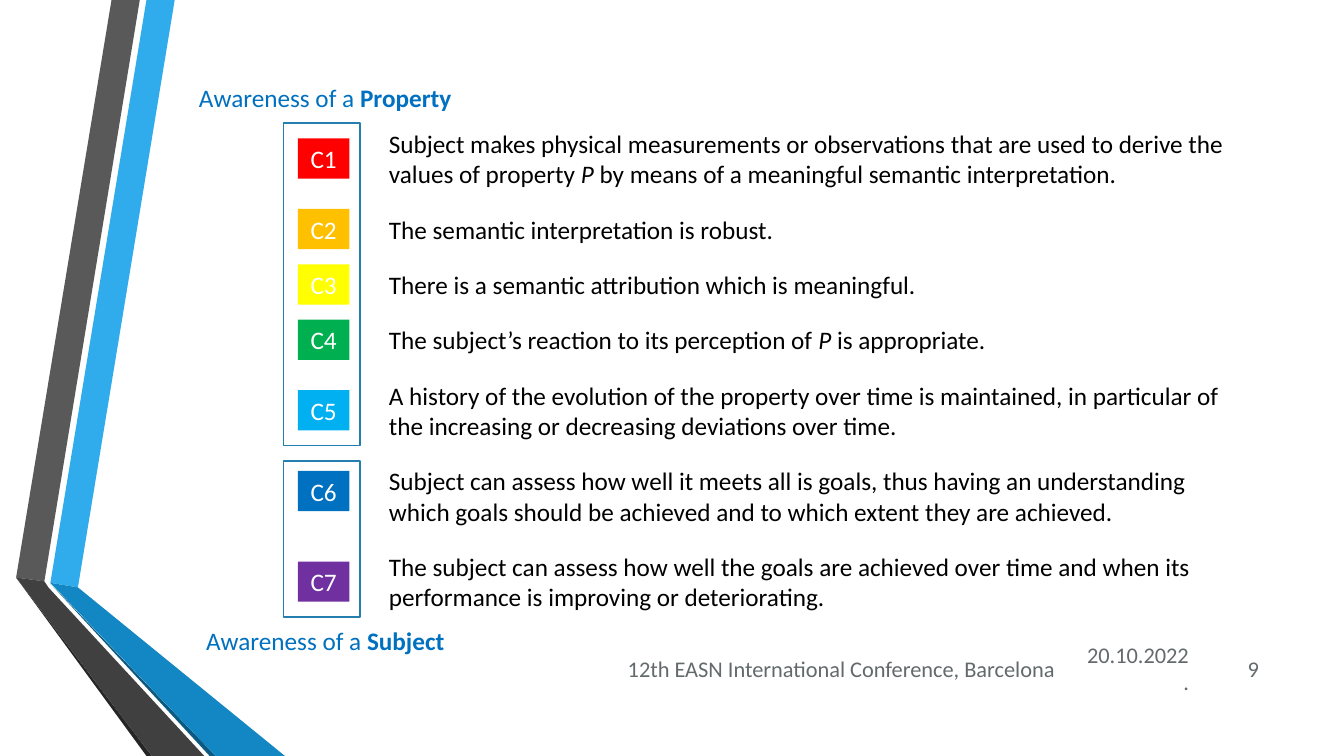
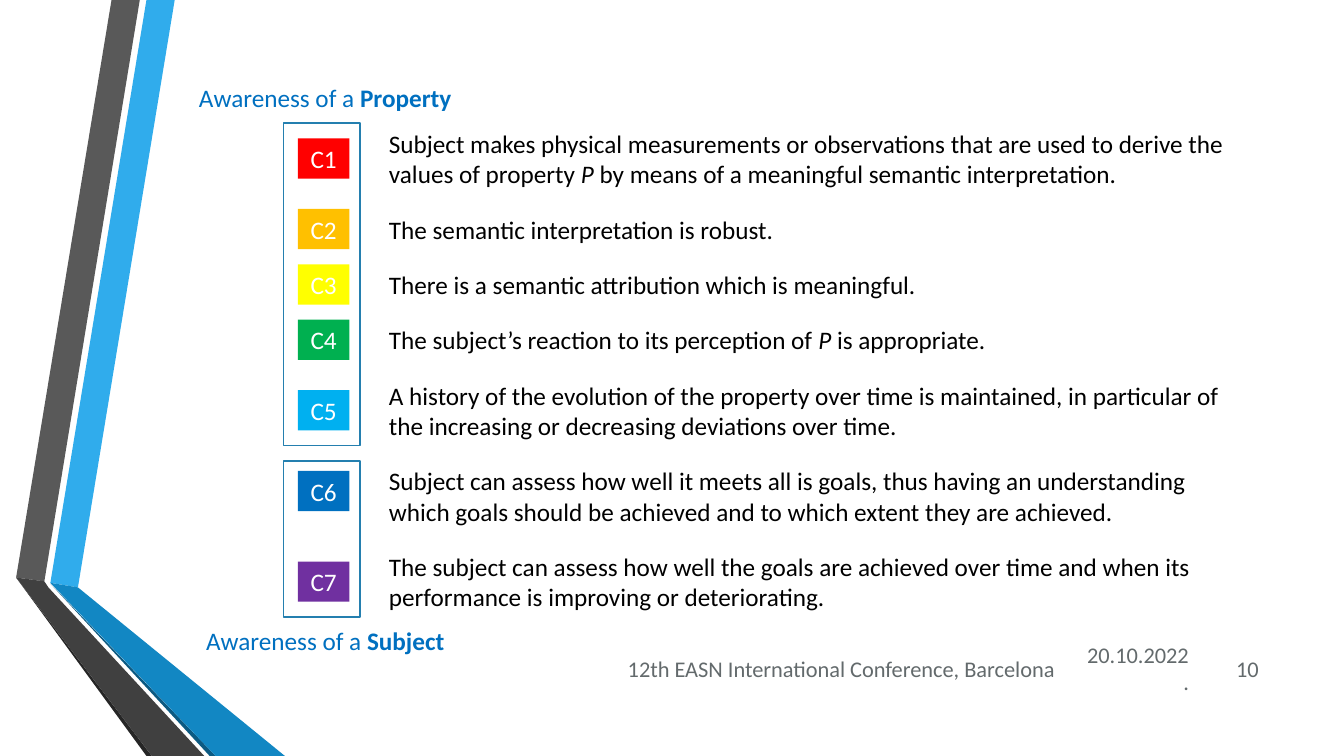
from dataclasses import dataclass

from pptx import Presentation
from pptx.dml.color import RGBColor
from pptx.enum.shapes import MSO_SHAPE
from pptx.enum.text import MSO_ANCHOR, PP_ALIGN
from pptx.util import Inches, Pt

RECTANGLE = MSO_SHAPE.RECTANGLE
LEFT, CENTER, RIGHT = PP_ALIGN.LEFT, PP_ALIGN.CENTER, PP_ALIGN.RIGHT
TOP, MIDDLE = MSO_ANCHOR.TOP, MSO_ANCHOR.MIDDLE
BLANK_LAYOUT = 6


@dataclass(frozen=True)
class Theme:
    font: str = "Calibri"
    body_size: int = 18
    footer_size: int = 16
    text: str = "000000"
    heading: str = "0070C0"
    footer: str = "636A6C"
    badge_text: str = "FFFFFF"
    frame: str = "247FAF"
    frame_width: float = 1.25
    blue: str = "30ACEC"
    blue_fold: str = "1287C3"
    blue_edge: str = "0C5A82"
    gray: str = "595959"
    gray_fold: str = "404040"
    gray_edge: str = "262626"


THEME = Theme()


@dataclass(frozen=True)
class Box:
    left: float
    top: float
    width: float
    height: float

    def point(self, x, y):
        """Place a point given in percent of this box."""
        return (self.left + self.width * x / 100,
                self.top + self.height * y / 100)

    def share(self, x, y, width, height):
        """Cut out a box given in percent of this box."""
        return Box(*self.point(x, y),
                   self.width * width / 100, self.height * height / 100)

    def emu(self):
        return [Inches(v) for v in (self.left, self.top, self.width, self.height)]


@dataclass(frozen=True)
class Criterion:
    label: str
    color: str
    lines: int
    spans: tuple
    shift: int = 0  # badge offset in grid rows


SLIDE = Box(0, 0, 13.33, 7.5)

# Each band: fill and corners, in percent of the slide
BANDS = (
    (THEME.blue, ((3.75, 77.1), (5.8, 77.7), (13, 0), (10.9, 0))),
    (THEME.gray, ((10.4, 0), (8.3, 0), (1.2, 76.4), (3.3, 76.9))),
    (THEME.gray_edge, ((1.2, 76.4), (10.9, 100), (11.3, 100))),
    (THEME.blue_edge, ((3.75, 77.2), (15.6, 100), (16.05, 100))),
    (THEME.blue_fold, ((3.75, 77.1), (16.05, 100), (21.2, 100), (5.8, 77.7))),
    (THEME.gray_fold, ((15.2, 100), (3.6, 77.7), (3.3, 76.9), (1.2, 76.4),
                       (11.3, 100))),
)

PROPERTY_CRITERIA = (
    Criterion("C1", "FF0000", 2, (
        "Subject makes physical measurements or observations that are used "
        "to derive the values of property ", ("P", "italic"),
        " by means of a meaningful semantic interpretation.")),
    Criterion("C2", "FFC000", 1, ("The semantic interpretation is robust.",)),
    Criterion("C3", "FFFF00", 1, (
        "There is a semantic attribution which is meaningful.",)),
    Criterion("C4", "00B050", 1, (
        "The subject’s reaction to its perception of ", ("P", "italic"),
        " is appropriate.")),
    Criterion("C5", "00B0F0", 2, (
        "A history of the evolution of the property over time is maintained, "
        "in particular of the increasing or decreasing deviations over time.",)),
)
SUBJECT_CRITERIA = (
    Criterion("C6", "0070C0", 2, (
        "Subject can assess how well it meets all is goals, thus having an "
        "understanding which goals should be achieved and to which extent "
        "they are achieved.",), shift=-1),
    Criterion("C7", "7030A0", 2, (
        "The subject can assess how well the goals are achieved over time "
        "and when its performance is improving or deteriorating.",)),
)

# Grid rows taken by a criterion of one or two lines, and by the gap below it
ROWS = {1: 8, 2: 14}
GAP_ROWS = 3
BADGE_ROWS = 8


def rgb(color):
    return RGBColor.from_string(color)


def write_text(shape, *spans, size=THEME.body_size, color=THEME.text,
               align=LEFT, anchor=TOP):
    """Write spans, each a string or a (string, font attribute) pair."""
    frame = shape.text_frame
    frame.word_wrap = True
    frame.vertical_anchor = anchor
    para = frame.paragraphs[0]
    para.alignment = align
    for item in spans:
        words, style = (item, None) if isinstance(item, str) else item
        span = para.add_run()
        span.text = words
        span.font.name = THEME.font
        span.font.size = Pt(size)
        span.font.color.rgb = rgb(color)
        if style:
            setattr(span.font, style, True)


def add_text(page, box, *spans, **style):
    write_text(page.shapes.add_textbox(*box.emu()), *spans, **style)


def paint(shape, fill=None, line=None):
    shape.shadow.inherit = False
    if fill:
        shape.fill.solid()
        shape.fill.fore_color.rgb = rgb(fill)
    else:
        shape.fill.background()
    if line:
        shape.line.color.rgb = rgb(line)
        shape.line.width = Pt(THEME.frame_width)
    else:
        shape.line.fill.background()


def add_rectangle(page, box, **colors):
    shape = page.shapes.add_shape(RECTANGLE, *box.emu())
    paint(shape, **colors)
    return shape


def add_bands(page, box):
    for color, corners in BANDS:
        start, *others = [tuple(Inches(v) for v in box.point(*corner))
                          for corner in corners]
        builder = page.shapes.build_freeform(*start)
        builder.add_line_segments(others, close=True)
        paint(builder.convert_to_shape(), fill=color)


def add_footer(page, box, number):
    cells = (
        ("12th EASN International Conference, Barcelona", 0, 79.3),
        ("20.10.2022.", 80.1, 12.8),
        (str(number), 93.9, 6.1),
    )
    for words, left, width in cells:
        add_text(page, box.share(left, 0, width, 100), words,
                 size=THEME.footer_size, color=THEME.footer,
                 align=RIGHT, anchor=MIDDLE)


def add_heading(page, box, topic):
    add_text(page, box, "Awareness of a ", (topic, "bold"),
             color=THEME.heading, align=CENTER)


def add_criterion(page, box, criterion):
    row = box.height / ROWS[criterion.lines]
    badge_height = BADGE_ROWS * row
    left, middle = box.point(1.5, 50)
    badge = Box(left, middle - badge_height / 2 + criterion.shift * row,
                box.width * 0.054, badge_height)
    write_text(add_rectangle(page, badge, fill=criterion.color),
               criterion.label, color=THEME.badge_text,
               align=CENTER, anchor=MIDDLE)
    add_text(page, box.share(10, 0, 90, 100), *criterion.spans)


def add_criteria(page, box, groups):
    """Stack the criteria of all groups and frame the badges of each group."""
    total = sum(ROWS[criterion.lines] + GAP_ROWS
                for group in groups for criterion in group) - GAP_ROWS
    row = 100 / total
    top = 0
    for group in groups:
        first = top
        for criterion in group:
            rows = ROWS[criterion.lines]
            add_criterion(page, box.share(0, top * row, 100, rows * row),
                          criterion)
            top += rows + GAP_ROWS
        frame = box.share(0, first * row, 8, (top - GAP_ROWS - first) * row)
        add_rectangle(page, frame, line=THEME.frame)


def add_awareness_slide(deck, box, number):
    page = deck.slides.add_slide(deck.slide_layouts[BLANK_LAYOUT])
    add_bands(page, box)
    add_footer(page, box.share(21.1, 85.7, 73.3, 5.4), number)
    add_criteria(page, box.share(21.1, 16.3, 71, 65.3),
                 (PROPERTY_CRITERIA, SUBJECT_CRITERIA))
    add_heading(page, box.share(9.2, 10.3, 30, 5.3), "Property")
    add_heading(page, box.share(9.2, 82.1, 30, 5.3), "Subject")


def main():
    deck = Presentation()
    deck.slide_width = Inches(SLIDE.width)
    deck.slide_height = Inches(SLIDE.height)
    for number in (9, 10):
        add_awareness_slide(deck, SLIDE, number)
    deck.save("out.pptx")


if __name__ == "__main__":
    main()
